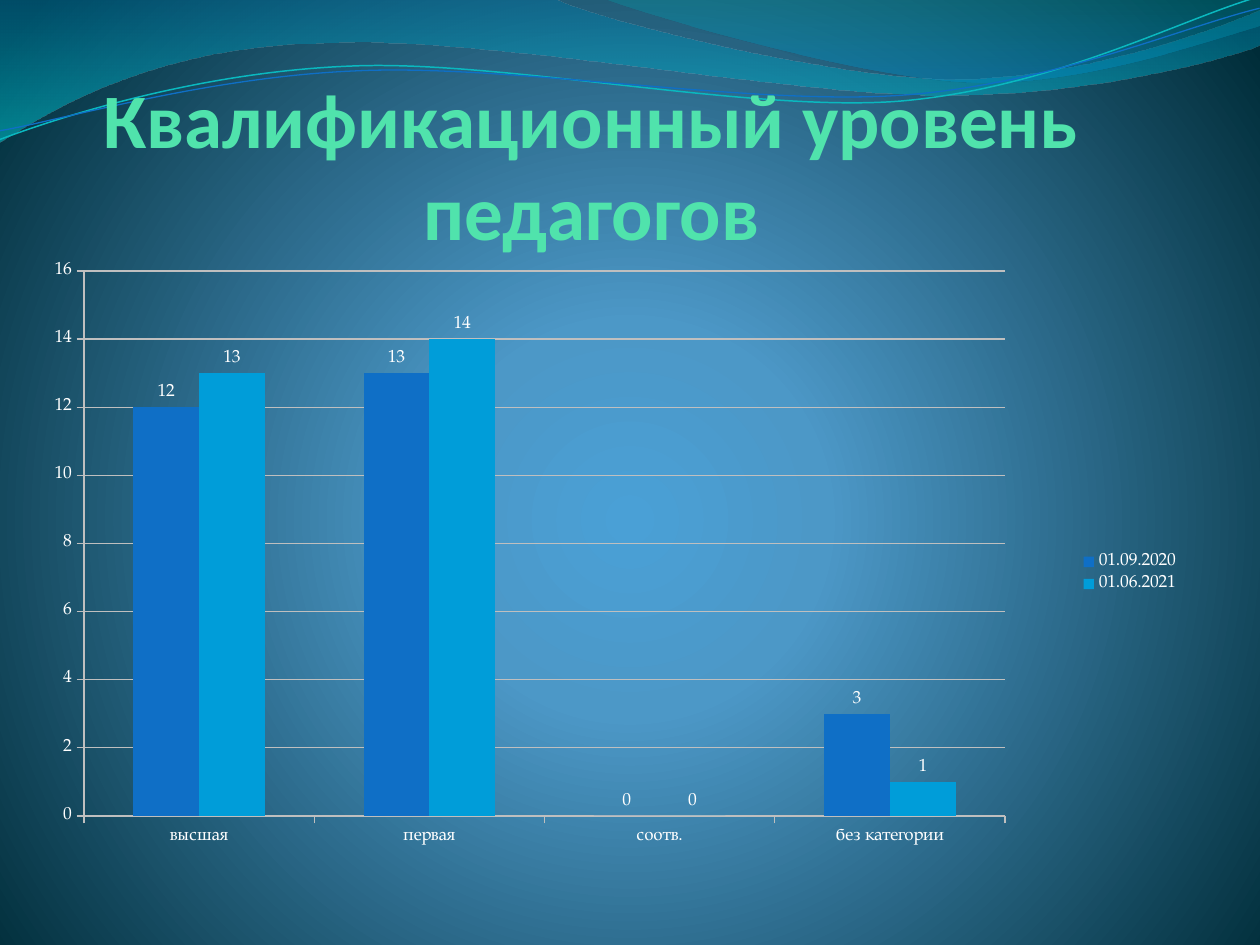
import pptx
import pptx.chart.data
import pptx.dml.color
import pptx.enum.chart
import pptx.enum.text
import pptx.oxml
import pptx.oxml.ns
import pptx.util

SCALE = 914400 / 126
COLORS = {
    "title": "50E3AC", "text": "FFFFFF", "axis": "BFBFBF",
    "blue": "0F6FC6", "sky": "009DD9", "aqua": "0AB8BF",
    "glow": "4AA0D6", "mist": "4C98C7", "night": "002C38",
    "wave_blue": "0074A1", "wave_cyan": "00C6CF",
    "crest_teal": "00A1A9", "crest_blue": "008BBF",
}
DOWNWARD = '<a:lin ang="5400000" scaled="1"/>'
RADIAL = ('<a:path path="circle"><a:fillToRect l="10000" t="110000" '
          'r="10000" b="100000"/></a:path>')
CURVE_TILT = 357.3

WAVE = [
    (0, 0), (554, -1),
    (600, 21, 837, 79, 955, 79), (1075, 79, 1207, 33, 1260, 11), (1261, 45),
    (1239, 55, 1096, 96, 940, 95), (784, 95, 481, 35, 324, 43),
    (163, 45, 58, 105, -1, 142),
]
CREST = [
    (604, -1), (641, 14, 859, 78, 969, 82),
    (1079, 87, 1211, 40, 1260, 26), (1260, 0),
]
AQUA_LINE = [
    (-3, 110), (59, 90, 199, 52, 350, 53),
    (499, 53, 745, 118, 896, 114), (1049, 109, 1184, 45, 1260, 27),
]
BLUE_LINE = [
    (-2, 101), (57, 94, 207, 57, 357, 58),
    (509, 58, 750, 112, 902, 108), (1052, 104, 1188, 52, 1262, 38),
]


def px(length):
    return pptx.util.Emu(round(length * SCALE))


def color(name):
    return pptx.dml.color.RGBColor.from_string(COLORS[name])


def xml(tag, content):
    return pptx.oxml.parse_xml(
        f"<{tag} {pptx.oxml.ns.nsdecls('a', 'c')}>{content}</{tag}>")


def set_gradient(fill, element, stops, direction):
    fill.gradient()
    gradient = element.find(".//" + pptx.oxml.ns.qn("a:gradFill"))
    marks = "".join(
        f'<a:gs pos="{position * 1000}"><a:srgbClr val="{COLORS[name]}">'
        f'<a:alpha val="{opacity * 1000}"/></a:srgbClr></a:gs>'
        for position, name, opacity in stops)
    content = f"<a:gsLst>{marks}</a:gsLst>{direction}"
    gradient.getparent().replace(gradient, xml("a:gradFill", content))


def bend_segments(shape, segments):
    corners = iter(shape.element.findall(".//" + pptx.oxml.ns.qn("a:lnTo")))
    for segment in segments[1:]:
        first = next(corners)
        if len(segment) == 2:
            continue
        bend = xml("a:cubicBezTo", "")
        first.addprevious(bend)
        for corner in (first, next(corners), next(corners)):
            bend.append(corner[0])
            corner.getparent().remove(corner)


def add_outline(page, segments, close):
    points = [(px(segment[i]), px(segment[i + 1]))
              for segment in segments for i in range(0, len(segment), 2)]
    builder = page.shapes.build_freeform(*points[0])
    builder.add_line_segments(points[1:], close=close)
    shape = builder.convert_to_shape()
    bend_segments(shape, segments)
    shape.shadow.inherit = False
    return shape


def add_wave(page, segments, stops):
    shape = add_outline(page, segments, True)
    set_gradient(shape.fill, shape.element, stops, DOWNWARD)
    shape.line.fill.background()


def add_curve(page, segments, name, width):
    shape = add_outline(page, segments, False)
    shape.rotation = CURVE_TILT
    shape.fill.background()
    shape.line.color.rgb = color(name)
    shape.line.width = pptx.util.Pt(width)


def add_title(page, text):
    title = page.shapes.title
    title.element.getparent().append(title.element)
    title.left, title.top, title.width, title.height = map(px, (39, 98, 1105, 158))
    frame = title.text_frame
    frame.margin_left = frame.margin_right = 0
    frame.margin_top = frame.margin_bottom = 0
    frame.word_wrap = True
    frame.auto_size = pptx.enum.text.MSO_AUTO_SIZE.NONE
    frame.vertical_anchor = pptx.enum.text.MSO_ANCHOR.BOTTOM
    para = frame.paragraphs[0]
    para.alignment = pptx.enum.text.PP_ALIGN.CENTER
    span = para.add_run()
    span.text = text
    span.font.name = "Calibri"
    span.font.size = pptx.util.Pt(44)
    span.font.bold = True
    span.font.color.rgb = color("title")


def set_plot_layout(chart, x, y, width, height):
    area = chart.element.find(".//" + pptx.oxml.ns.qn("c:plotArea"))
    for layout in area.findall(pptx.oxml.ns.qn("c:layout")):
        area.remove(layout)
    values = [("layoutTarget", "inner"), ("xMode", "edge"), ("yMode", "edge"),
              ("x", x), ("y", y), ("w", width), ("h", height)]
    content = "".join(f'<c:{tag} val="{value}"/>' for tag, value in values)
    area.insert(0, xml("c:layout", f"<c:manualLayout>{content}</c:manualLayout>"))


def format_axis(axis):
    axis.major_tick_mark = pptx.enum.chart.XL_TICK_MARK.OUTSIDE
    axis.minor_tick_mark = pptx.enum.chart.XL_TICK_MARK.NONE
    axis.format.line.color.rgb = color("axis")
    axis.format.line.width = pptx.util.Pt(0.75)


def add_level_chart(page):
    width, height = 1150, 634
    data = pptx.chart.data.CategoryChartData(number_format="General")
    data.categories = ["высшая", "первая", "соотв.", "без категории"]
    data.add_series("01.09.2020", [12, 13, 0, 3])
    data.add_series("01.06.2021", [13, 14, 0, 1])
    chart = page.shapes.add_chart(
        pptx.enum.chart.XL_CHART_TYPE.COLUMN_CLUSTERED,
        *map(px, (42, 256, width, height)), data).chart
    chart.has_title = False
    chart.font.name = "TeX Gyre Pagella"
    chart.font.size = pptx.util.Pt(10)
    chart.font.color.rgb = color("text")
    chart.has_legend = True
    chart.legend.position = pptx.enum.chart.XL_LEGEND_POSITION.RIGHT
    chart.legend.include_in_layout = False
    set_plot_layout(chart, 42 / width, 15 / height, 921 / width, 545 / height)

    format_axis(chart.category_axis)
    axis = chart.value_axis
    format_axis(axis)
    axis.minimum_scale, axis.maximum_scale, axis.major_unit = 0, 16, 2
    axis.has_major_gridlines = True
    axis.major_gridlines.format.line.color.rgb = color("axis")
    axis.major_gridlines.format.line.width = pptx.util.Pt(0.75)

    plot = chart.plots[0]
    plot.gap_width = 150
    plot.overlap = 0
    plot.vary_by_categories = False
    for series, name in zip(plot.series, ("blue", "sky")):
        series.format.fill.solid()
        series.format.fill.fore_color.rgb = color(name)
        series.data_labels.show_value = True
        series.data_labels.position = pptx.enum.chart.XL_LABEL_POSITION.OUTSIDE_END


def main():
    deck = pptx.Presentation()
    deck.slide_width, deck.slide_height = px(1260), px(945)
    page = deck.slides.add_slide(deck.slide_layouts[5])
    set_gradient(page.background.fill, page.element,
                 [(0, "glow", 100), (25, "mist", 100), (100, "night", 100)], RADIAL)
    add_wave(page, WAVE, [(0, "wave_blue", 45), (100, "wave_cyan", 55)])
    add_wave(page, CREST, [(0, "crest_teal", 30), (80, "crest_blue", 45)])
    add_curve(page, AQUA_LINE, "aqua", 0.85)
    add_curve(page, BLUE_LINE, "blue", 0.75)
    add_title(page, "Квалификационный уровень педагогов")
    add_level_chart(page)
    deck.save("out.pptx")


if __name__ == "__main__":
    main()
